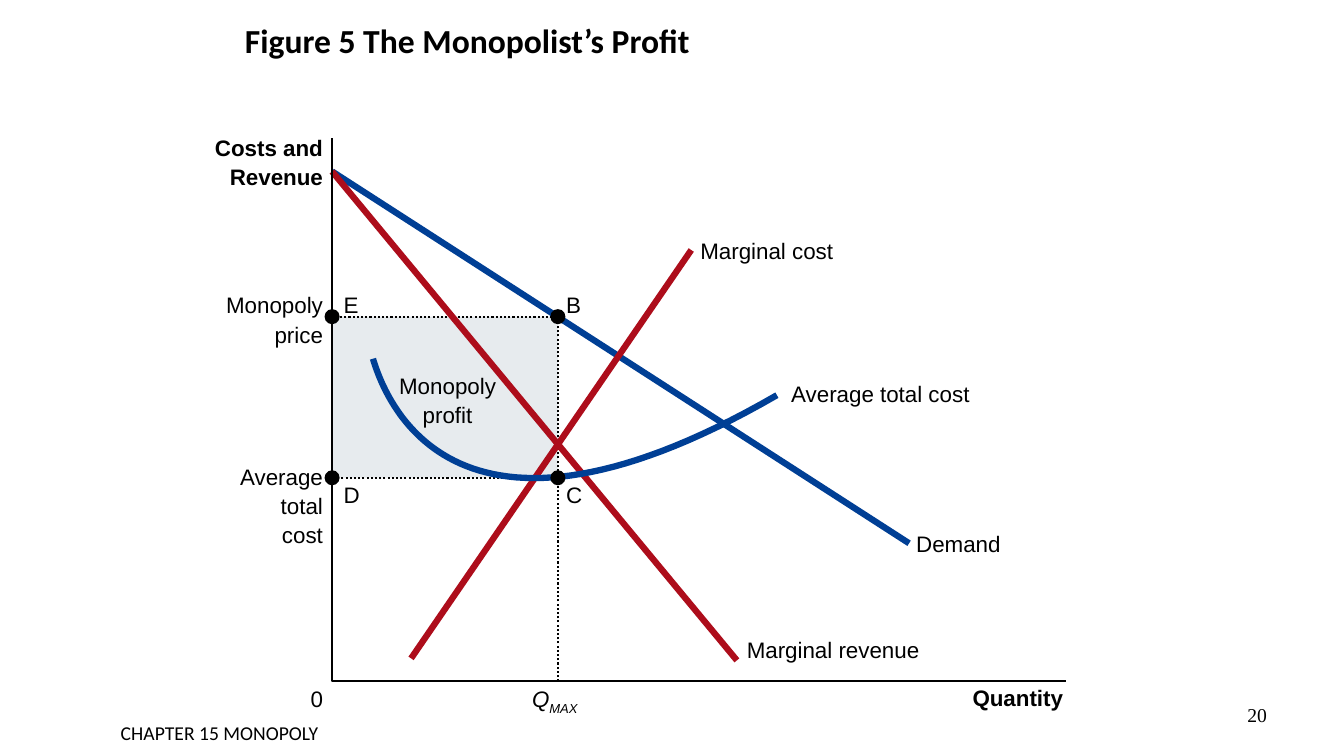
import pptx
import pptx.dml.color
import pptx.enum.dml
import pptx.enum.shapes
import pptx.enum.text
import pptx.oxml.ns
import pptx.util
import lxml.etree

Cm = pptx.util.Cm
Pt = pptx.util.Pt
Color = pptx.dml.color.RGBColor
Align = pptx.enum.text.PP_ALIGN
Kind = pptx.enum.shapes.MSO_SHAPE

BLACK = Color(0, 0, 0)
BLUE = Color(0x00, 0x3F, 0x95)
RED = Color(0xAD, 0x0D, 0x1B)
GREY = Color(0xE7, 0xEB, 0xEE)

LABEL = {"name": "Arial", "size": Pt(16), "bold": False}
HEAD = {"name": "Arial", "size": Pt(16), "bold": True}
MATH = {"name": "Arial", "size": Pt(16), "italic": True}
TITLE = {"name": "Calibri", "size": Pt(24), "bold": True}
FOOT = {"name": "Calibri", "size": Pt(14)}
PAGE = {"name": "Times New Roman", "size": Pt(14)}

# Key places on the graph, in centimetres
AXIS, QMAX = 8.37, 14.06
PRICE, COST = 7.98, 12.04
TOP, BASE, END = 3.48, 17.17, 26.87
CHOKE = (AXIS, 4.32)
EDGE = 8.14
ROW = 0.69
DOT = 0.38


def style(font, form):
    for key, value in form.items():
        setattr(font, key, value)
    font.color.rgb = BLACK


def write(slide, text, box, form=LABEL, align=Align.LEFT, inset=None):
    """Add a text box with one paragraph for each line of text."""
    frame = slide.shapes.add_textbox(*map(Cm, box)).text_frame
    frame.word_wrap = inset is None
    if inset is not None:
        for side in ("left", "top", "right", "bottom"):
            setattr(frame, "margin_" + side, inset)
    for num, line in enumerate(text.split("\n")):
        para = frame.paragraphs[0] if num == 0 else frame.add_paragraph()
        para.alignment = align
        para.space_before = Pt(1.8 if num else 0)
        run = para.add_run()
        run.text = line
        style(run.font, form)
    return frame


def label(slide, text, left, top, width, form=LABEL, align=Align.LEFT):
    """Add graph text without insets, sized to its lines."""
    high = ROW + 0.71 * text.count("\n")
    return write(slide, text, (left, top, width, high), form, align, 0)


def solid(slide, kind, box, color):
    shape = slide.shapes.add_shape(kind, *map(Cm, box))
    shape.shadow.inherit = False
    shape.fill.solid()
    shape.fill.fore_color.rgb = color
    shape.line.fill.background()


def pen(line, color, width, dots=False):
    line.color.rgb = color
    line.width = Pt(width)
    if dots:
        line.dash_style = pptx.enum.dml.MSO_LINE.ROUND_DOT


def straight(slide, start, stop, color, width=4.5, dots=False):
    kind = pptx.enum.shapes.MSO_CONNECTOR.STRAIGHT
    line = slide.shapes.add_connector(kind, *map(Cm, start + stop))
    props = line._element.spPr
    pen(line.line, color, width, dots)
    lxml.etree.SubElement(props, pptx.oxml.ns.qn("a:effectLst"))


def trace(slide, points, color, width=1.5, dots=False):
    """Draw an open, unfilled outline through the points."""
    spots = [(Cm(x), Cm(y)) for x, y in points]
    build = slide.shapes.build_freeform(*spots[0])
    build.add_line_segments(spots[1:], close=False)
    shape = build.convert_to_shape()
    shape.shadow.inherit = False
    shape.fill.background()
    pen(shape.line, color, width, dots)


def bezier(knots, steps=60):
    """Return points along a cubic curve with four knots."""
    points = []
    for num in range(steps + 1):
        t = num / steps
        parts = ((1 - t) ** 3, 3 * t * (1 - t) ** 2, 3 * t * t * (1 - t), t ** 3)
        points.append(tuple(sum(w * knot[i] for w, knot in zip(parts, knots))
                            for i in (0, 1)))
    return points


def heading(slide):
    title = slide.shapes.title
    place = {"left": 5.92, "top": 0.15, "width": 22.86, "height": 1.9}
    for key, value in place.items():
        setattr(title, key, Cm(value))
    frame = title.text_frame
    frame.text = "Figure 5 The Monopolist’s Profit"
    frame.vertical_anchor = pptx.enum.text.MSO_ANCHOR.MIDDLE
    para = frame.paragraphs[0]
    para.alignment = Align.LEFT
    para.line_spacing = 0.8
    style(para.runs[0].font, TITLE)


def profit(slide):
    solid(slide, Kind.RECTANGLE, (AXIS, PRICE, QMAX - AXIS, COST - PRICE), GREY)
    label(slide, "Monopoly\nprofit", 9.93, 9.37, 2.7, align=Align.CENTER)
    straight(slide, (QMAX, COST), (AXIS, COST), BLACK, 1.5, True)
    trace(slide, [(QMAX, BASE), (QMAX, PRICE), (AXIS, PRICE)], BLACK, dots=True)


def scales(slide):
    for text, top, width, form in (
        ("Costs and\nRevenue", 3.38, 3, HEAD),
        ("Monopoly\nprice", 7.34, 2.7, LABEL),
        ("Average\ntotal\ncost", 11.66, 2.4, LABEL),
        ("0", 17.27, 0.5, LABEL),
    ):
        label(slide, text, EDGE - width, top, width, form, Align.RIGHT)
    label(slide, "Quantity", 24.51, 17.25, 2.5, HEAD)
    frame = label(slide, "Q", 13.41, 17.27, 1.5, MATH)
    run = frame.paragraphs[0].add_run()
    run.text = "MAX"
    style(run.font, MATH)
    run.font._element.set("baseline", "-25000")


def curves(slide):
    for start, stop, color in (
        (CHOKE, (22.91, 13.69), BLUE),
        ((17.42, 6.3), (10.36, 16.59), RED),
        (CHOKE, (18.57, 16.64), RED),
    ):
        straight(slide, start, stop, color)
    knots = ((9.4, 9.04), (9.75, 10.21), (11.53, 14.61), (19.58, 9.96))
    trace(slide, bezier(knots), BLUE, 4.5)
    for text, left, top, width in (
        ("Demand", 23.09, 13.36, 2.4),
        ("Marginal cost", 17.65, 5.97, 3.6),
        ("Marginal revenue", 18.82, 16.03, 4.6),
        ("Average total cost", 19.94, 9.58, 4.8),
    ):
        label(slide, text, left, top, width)


def corners(slide):
    for name, x, y, left, top in (
        ("B", QMAX, PRICE, 14.27, 7.34),
        ("C", QMAX, COST, 14.27, 12.12),
        ("E", AXIS, PRICE, 8.66, 7.34),
        ("D", AXIS, COST, 8.66, 12.12),
    ):
        solid(slide, Kind.OVAL, (x - DOT / 2, y - DOT / 2, DOT, DOT), BLACK)
        label(slide, name, left, top, 0.5)


def main():
    deck = pptx.Presentation()
    deck.slide_width, deck.slide_height = Cm(33.87), Cm(19.05)
    slide = deck.slides.add_slide(deck.slide_layouts[5])
    heading(slide)
    profit(slide)
    scales(slide)
    curves(slide)
    corners(slide)
    trace(slide, [(AXIS, TOP), (AXIS, BASE), (END, BASE)], BLACK)
    write(slide, "20", (30.12, 17.58, 2.06, 1.32), PAGE, Align.RIGHT)
    write(slide, "CHAPTER 15 MONOPOLY", (0.81, 18.03, 9.45, 0.84), FOOT,
          Align.CENTER)
    deck.save("out.pptx")


if __name__ == "__main__":
    main()
